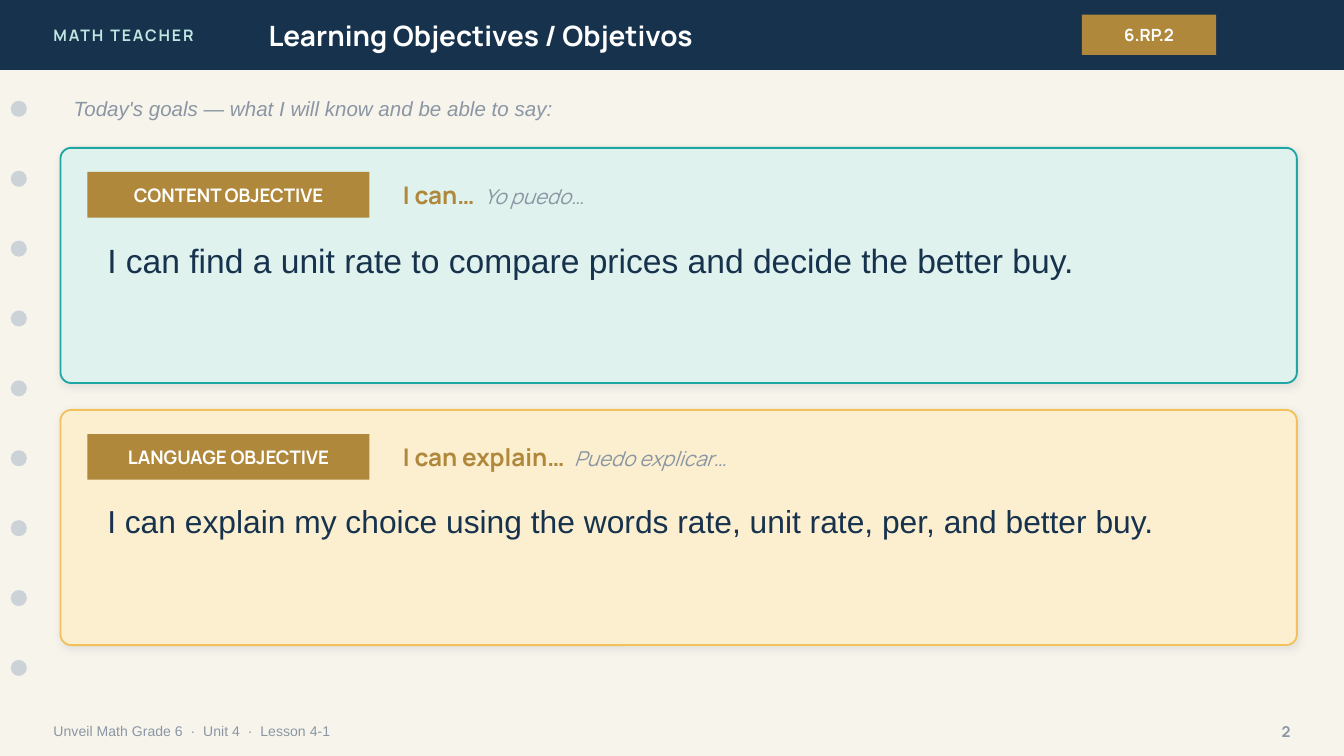
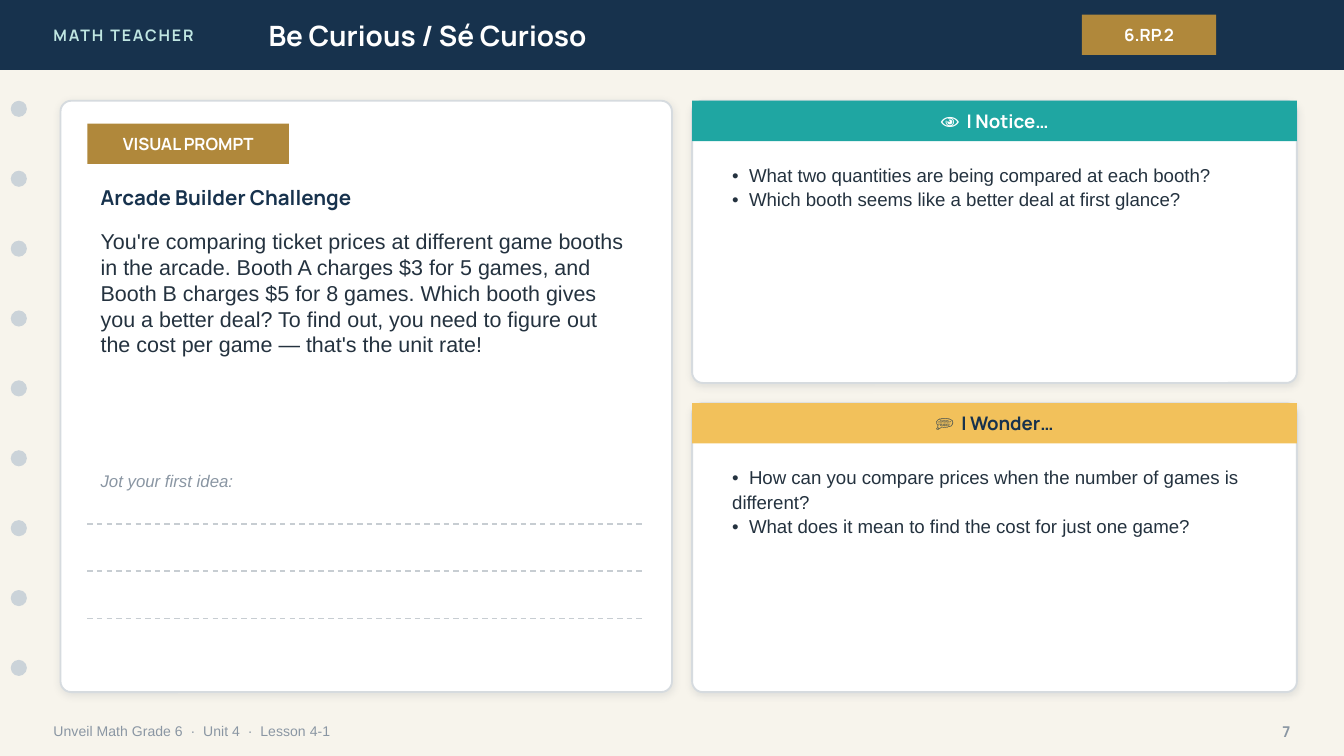
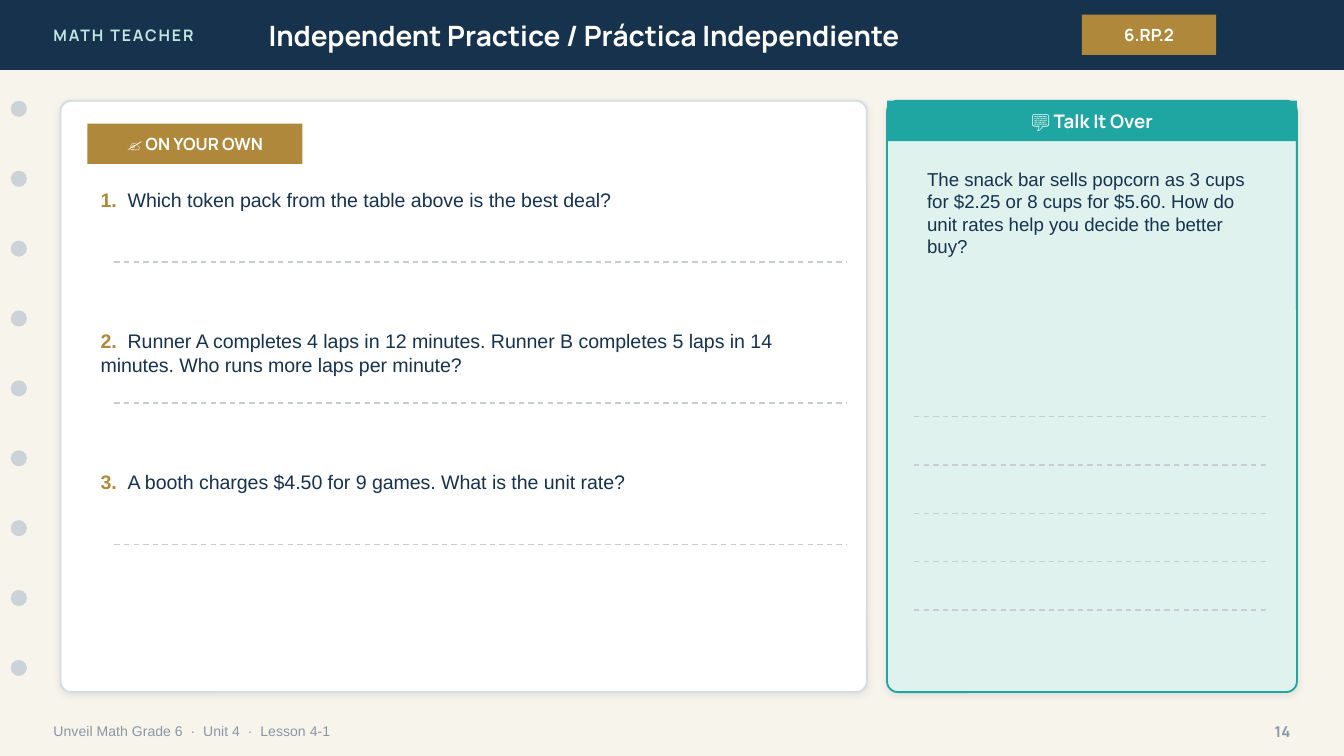
"""Build three lesson slides: objectives, be curious and independent practice."""
from lxml.etree import SubElement
from pptx import Presentation
from pptx.dml.color import RGBColor
from pptx.enum.dml import MSO_LINE
from pptx.enum.shapes import MSO_CONNECTOR, MSO_SHAPE
from pptx.enum.text import MSO_ANCHOR, PP_ALIGN
from pptx.oxml.ns import qn
from pptx.util import Emu, Pt

EMU_PER_PX = 9144
PAGE_WIDTH = 1000
CARD_RADIUS = 8
BAR_HEIGHT = 52
STRIP_HEIGHT = 30
CARD_TOP = 75
BODY_FONT = "Arial"
HEAD_FONT = "Manrope"
COLORS = {
    "paper": "F7F4EC", "navy": "17324D", "mint": "BFE6E2", "white": "FFFFFF",
    "bronze": "B0883B", "hole": "CBD3D9", "muted": "8A96A3", "ink": "24323F",
    "teal": "1FA6A2", "pale_teal": "DFF2EE", "gold": "F2C15B",
    "pale_gold": "FBEFD0", "border": "D6DBDF", "rule": "C7CDD2",
    "shadow": "1C2E42",
}


def px(length):
    """Turn a length in px into EMU."""
    return Emu(length * EMU_PER_PX)


def color(name):
    """Return the named palette colour."""
    return RGBColor.from_string(COLORS[name])


def style_span(span, size, tint, font=BODY_FONT, bold=False, italic=False):
    """Set the font of one run."""
    span.font.name = font
    span.font.size = Pt(size)
    span.font.bold = bold
    span.font.italic = italic
    span.font.color.rgb = color(tint)


def add_text(page, place, text, size, tint, middle=True, align=PP_ALIGN.LEFT,
             spacing=None, **style):
    """Add a wrapped text box with one style and return it."""
    box = page.shapes.add_textbox(*map(px, place))
    frame = box.text_frame
    frame.word_wrap = True
    frame.vertical_anchor = MSO_ANCHOR.MIDDLE if middle else MSO_ANCHOR.TOP
    frame.text = text
    for para in frame.paragraphs:
        para.alignment = align
        if spacing:
            para.line_spacing = spacing
        for span in para.runs:
            style_span(span, size, tint, **style)
    return box


def add_lead_text(page, place, lead, lead_style, rest, rest_style, middle=True):
    """Add a text box whose opening words have a style of their own."""
    box = add_text(page, place, lead, middle=middle, **lead_style)
    span = box.text_frame.paragraphs[0].add_run()
    span.text = rest
    style_span(span, **rest_style)


def add_prompts(page, place, prompts):
    """Add a list of prompts whose wrapped lines start flush left."""
    text = "\n".join(f"•  {prompt}" for prompt in prompts)
    add_text(page, place, text, 10, "ink", middle=False, spacing=1.1)


def add_block(page, place, fill, kind=MSO_SHAPE.RECTANGLE):
    """Add a flat filled shape without outline or shadow."""
    block = page.shapes.add_shape(kind, *map(px, place))
    block.shadow.inherit = False
    block.fill.solid()
    block.fill.fore_color.rgb = color(fill)
    block.line.fill.background()
    return block


def add_tag(page, place, text, size, fill="bronze", tint="white"):
    """Add a filled block with a bold centred caption."""
    frame = add_block(page, place, fill).text_frame
    frame.vertical_anchor = MSO_ANCHOR.MIDDLE
    frame.text = text
    frame.paragraphs[0].alignment = PP_ALIGN.CENTER
    style_span(frame.paragraphs[0].runs[0], size, tint, HEAD_FONT, bold=True)


def add_card(page, place, fill="white", border="border"):
    """Add a rounded, outlined card with a soft shadow."""
    card = add_block(page, place, fill, MSO_SHAPE.ROUNDED_RECTANGLE)
    card.adjustments[0] = CARD_RADIUS / min(place[2:])
    card.line.color.rgb = color(border)
    card.line.width = Pt(1)
    effects = card._element.spPr.find(qn("a:effectLst"))
    shadow = SubElement(effects, qn("a:outerShdw"), blurRad=str(Pt(4)),
                        dist=str(Pt(1)), dir="5400000", algn="bl", rotWithShape="0")
    shade = SubElement(shadow, qn("a:srgbClr"), val=COLORS["shadow"])
    SubElement(shade, qn("a:alpha"), val="10000")


def add_headed_card(page, place, title, strip, tint="white", **card_style):
    """Add a card with a coloured title strip along its top."""
    left, top, width, _ = place
    add_card(page, place, **card_style)
    add_tag(page, (left, top, width, STRIP_HEIGHT), title, 10, strip, tint)


def add_rules(page, left, right, top, count=1, gap=0):
    """Add evenly spaced dashed writing lines."""
    for index in range(count):
        height = px(top + index * gap)
        rule = page.shapes.add_connector(
            MSO_CONNECTOR.STRAIGHT, px(left), height, px(right), height)
        rule.line.color.rgb = color("rule")
        rule.line.width = Pt(0.75)
        rule.line.dash_style = MSO_LINE.DASH
        SubElement(rule._element.spPr, qn("a:effectLst"))


def add_page(deck, title, number):
    """Add a slide with the shared header, binder holes and footer."""
    page = deck.slides.add_slide(deck.slide_layouts[6])
    page.background.fill.solid()
    page.background.fill.fore_color.rgb = color("paper")
    add_block(page, (0, 0, PAGE_WIDTH, BAR_HEIGHT), "navy")
    owner = add_text(page, (30, 0, 240, BAR_HEIGHT), "MATH TEACHER", 8.5, "mint",
                     font=HEAD_FONT, bold=True)
    owner.text_frame.paragraphs[0].runs[0].font._element.set("spc", "100")
    add_text(page, (190, 0, 560, BAR_HEIGHT), title, 15, "white",
             font=HEAD_FONT, bold=True)
    add_tag(page, (805, 11, 100, 30), "6.RP.2", 9)
    for index in range(9):
        add_block(page, (8, 75 + index * 52, 12, 12), "hole", MSO_SHAPE.OVAL)
    add_text(page, (30, 530, 700, 28), "Unveil Math Grade 6  ·  Unit 4  ·  Lesson 4-1",
             7.5, "muted")
    add_text(page, (920, 530, 50, 28), str(number), 8, "muted",
             align=PP_ALIGN.RIGHT, font=HEAD_FONT, bold=True)
    return page


def add_objective(page, top, tag, starter, translation, goal, size, fill, border):
    """Add one objective card with its tag, sentence starter and goal."""
    add_card(page, (45, top, 920, 175), fill, border)
    add_tag(page, (65, top + 18, 210, 34), tag, 10)
    add_lead_text(
        page, (290, top + 18, 660, 34),
        f"{starter}  ", dict(size=13, tint="bronze", font=HEAD_FONT, bold=True),
        translation, dict(size=11, tint="muted", font=HEAD_FONT, italic=True))
    add_text(page, (70, top + 62, 870, 100), goal, size, "navy",
             middle=False, spacing=1.05)


def build_objectives(deck):
    """Build the learning objectives slide."""
    page = add_page(deck, "Learning Objectives / Objetivos", 2)
    add_text(page, (45, 66, 920, 30),
             "Today's goals — what I will know and be able to say:",
             11, "muted", italic=True)
    add_objective(page, 110, "CONTENT OBJECTIVE", "I can…", "Yo puedo…",
                  "I can find a unit rate to compare prices and decide the better buy.",
                  18, "pale_teal", "teal")
    add_objective(page, 305, "LANGUAGE OBJECTIVE", "I can explain…", "Puedo explicar…",
                  "I can explain my choice using the words rate, unit rate, per, "
                  "and better buy.", 17, "pale_gold", "gold")


def build_curious(deck):
    """Build the notice and wonder slide."""
    page = add_page(deck, "Be Curious / Sé Curioso", 7)
    add_card(page, (45, CARD_TOP, 455, 440))
    add_tag(page, (65, 92, 150, 30), "VISUAL PROMPT", 9)
    add_text(page, (65, 132, 415, 30), "Arcade Builder Challenge", 11, "navy",
             font=HEAD_FONT, bold=True)
    add_text(page, (65, 165, 415, 170),
             "You're comparing ticket prices at different game booths in the arcade. "
             "Booth A charges $3 for 5 games, and Booth B charges $5 for 8 games. "
             "Which booth gives you a better deal? To find out, you need to figure out "
             "the cost per game — that's the unit rate!", 11.5, "ink", middle=False)
    add_text(page, (65, 345, 400, 25), "Jot your first idea:", 9, "muted", italic=True)
    add_rules(page, 65, 480, 390, count=3, gap=35)
    add_headed_card(page, (515, CARD_TOP, 450, 210), "👁  I Notice…", "teal")
    add_prompts(page, (535, 115, 410, 160), [
        "What two quantities are being compared at each booth?",
        "Which booth seems like a better deal at first glance?"])
    add_headed_card(page, (515, 300, 450, 215), "💭  I Wonder…", "gold", "navy")
    add_prompts(page, (535, 340, 410, 165), [
        "How can you compare prices when the number of games is different?",
        "What does it mean to find the cost for just one game?"])


def build_practice(deck):
    """Build the independent practice slide."""
    page = add_page(deck, "Independent Practice / Práctica Independiente", 14)
    add_card(page, (45, CARD_TOP, 600, 440))
    add_tag(page, (65, 92, 160, 30), "✍️ ON YOUR OWN", 9)
    questions = [
        "Which token pack from the table above is the best deal?",
        "Runner A completes 4 laps in 12 minutes. Runner B completes 5 laps in "
        "14 minutes. Who runs more laps per minute?",
        "A booth charges $4.50 for 9 games. What is the unit rate?",
    ]
    for index, question in enumerate(questions):
        top = 135 + index * 105
        add_lead_text(page, (65, top, 565, 50),
                      f"{index + 1}.  ", dict(size=10.5, tint="bronze", bold=True),
                      question, dict(size=10.5, tint="navy"), middle=False)
        add_rules(page, 85, 630, top + 60)
    add_headed_card(page, (660, CARD_TOP, 305, 440), "💬 Talk It Over", "teal",
                    fill="pale_teal", border="teal")
    add_text(page, (680, 120, 270, 170),
             "The snack bar sells popcorn as 3 cups for $2.25 or 8 cups for $5.60. "
             "How do unit rates help you decide the better buy?",
             10, "navy", middle=False)
    add_rules(page, 680, 945, 310, count=5, gap=36)


def main():
    """Build the deck and save it."""
    deck = Presentation()
    deck.slide_width = px(PAGE_WIDTH)
    deck.slide_height = Emu(deck.slide_width * 9 // 16)
    build_objectives(deck)
    build_curious(deck)
    build_practice(deck)
    deck.save("out.pptx")


if __name__ == "__main__":
    main()
